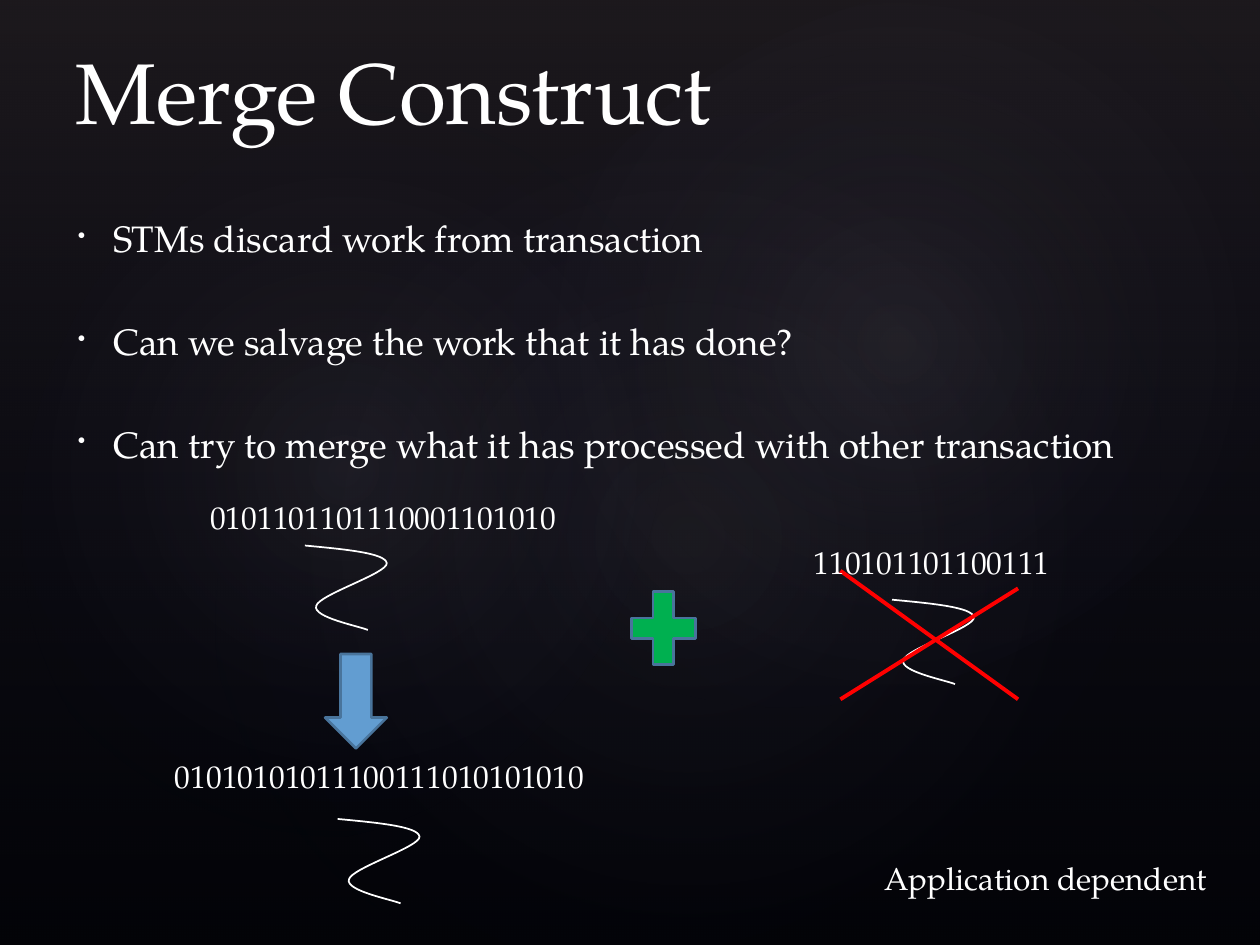
from dataclasses import dataclass
from typing import NamedTuple

from lxml.etree import SubElement
from pptx import Presentation
from pptx.dml.color import RGBColor
from pptx.enum.shapes import MSO_CONNECTOR, MSO_SHAPE
from pptx.enum.text import MSO_ANCHOR
from pptx.oxml import parse_xml
from pptx.oxml.ns import nsdecls, qn
from pptx.util import Inches, Pt


@dataclass(frozen=True)
class Theme:
    font: str = "TeX Gyre Pagella"
    background: str = "000000"
    text: str = "FFFFFF"
    glow: str = "C4BCC6"
    glow_edge: str = "242852"
    veil: str = "504652"
    cross: str = "FF0000"
    plus: str = "00B050"
    arrow: str = "629DD1"
    outline: str = "49749B"
    title_size: int = 49
    body_size: int = 21
    label_size: int = 18


class Box(NamedTuple):
    left: float
    top: float
    width: float
    height: float


class Glow(NamedTuple):
    box: Box
    rotation: float
    opacity: int


class Label(NamedTuple):
    text: str
    box: Box


class Stop(NamedTuple):
    position: int
    color: str
    opacity: int


THEME = Theme()
LINEAR = '<a:lin ang="5400000" scaled="0"/>'
RADIAL = ('<a:path path="circle"><a:fillToRect l="50000" t="50000" '
          'r="50000" b="50000"/></a:path>')
GLOWS = [
    Glow(Box(1.5, 1.14, 7.92, 6.24), 328.7, 7),
    Glow(Box(-0.3, 1.28, 6.06, 4.9), 294.3, 8),
    Glow(Box(3.58, 0.13, 7.09, 5.2), 328.7, 8),
]
BULLETS = [
    "STMs discard work from transaction",
    "Can we salvage the work that it has done?",
    "Can try to merge what it has processed with other transaction",
]
LABELS = [
    Label("0101101101110001101010", Box(1.57, 3.9, 2.98, 0.4)),
    Label("110101101100111", Box(6.36, 4.26, 2.1, 0.4)),
    Label("01010101011100111010101010", Box(1.29, 5.96, 3.48, 0.4)),
    Label("Application dependent", Box(6.92, 6.77, 2.86, 0.4)),
]
THREAD_STARTS = [(2.42, 4.33), (7.08, 4.76), (2.68, 6.5)]
THREAD_CURVE = [
    (0.32, 0.03), (0.64, 0.06), (0.65, 0.14),
    (0.66, 0.22), (0.11, 0.39), (0.09, 0.48),
    (0.06, 0.57), (0.43, 0.64), (0.5, 0.67),
]
CROSS_LINES = [(8.08, 4.67, 6.67, 5.55), (6.67, 4.53, 8.08, 5.55)]


def rgb(color: str) -> RGBColor:
    return RGBColor.from_string(color)


def add_preset(slide, preset, box: Box):
    shape = slide.shapes.add_shape(preset, *map(Inches, box))
    shape.shadow.inherit = False
    return shape


def add_gradient(slide, preset, box: Box, stops: list[Stop], direction: str):
    shape = add_preset(slide, preset, box)
    shape.line.fill.background()
    shape.fill.gradient()
    stop_xml = "".join(
        f'<a:gs pos="{stop.position * 1000}"><a:srgbClr val="{stop.color}">'
        f'<a:alpha val="{stop.opacity * 1000}"/></a:srgbClr></a:gs>'
        for stop in stops
    )
    gradient = parse_xml(
        f'<a:gradFill {nsdecls("a")} rotWithShape="1">'
        f"<a:gsLst>{stop_xml}</a:gsLst>{direction}</a:gradFill>"
    )
    properties = shape._element.spPr
    properties.replace(properties.find(qn("a:gradFill")), gradient)
    return shape


def add_backdrop(slide) -> None:
    slide.background.fill.solid()
    slide.background.fill.fore_color.rgb = rgb(THEME.background)
    add_gradient(slide, MSO_SHAPE.RECTANGLE, Box(0, 0, 10, 7.5),
                 [Stop(0, THEME.veil, 36), Stop(100, THEME.glow_edge, 10)], LINEAR)
    for glow in GLOWS:
        stops = [Stop(0, THEME.glow, glow.opacity), Stop(58, THEME.glow_edge, 0)]
        shape = add_gradient(slide, MSO_SHAPE.OVAL, glow.box, stops, RADIAL)
        shape.rotation = glow.rotation


def add_text(slide, lines: list[str], box: Box, size: int,
             anchor=MSO_ANCHOR.TOP, wrap: bool = True):
    frame = slide.shapes.add_textbox(*map(Inches, box)).text_frame
    frame.word_wrap = wrap
    frame.vertical_anchor = anchor
    frame.text = "\n".join(lines)
    for paragraph in frame.paragraphs:
        paragraph.font.name = THEME.font
        paragraph.font.size = Pt(size)
        paragraph.font.color.rgb = rgb(THEME.text)
    return frame


def add_bullets(slide) -> None:
    frame = add_text(slide, BULLETS, Box(0.5, 1.33, 8.58, 2.75),
                     THEME.body_size, MSO_ANCHOR.MIDDLE)
    for index, paragraph in enumerate(frame.paragraphs):
        paragraph.space_before = Pt(33.4 if index else 4.2)
        properties = paragraph._p.get_or_add_pPr()
        properties.set("marL", str(Inches(0.3)))
        properties.set("indent", str(Inches(-0.28)))
        bullet_size = parse_xml(f'<a:buSzPct {nsdecls("a")} val="60000"/>')
        bullet = parse_xml(f'<a:buChar {nsdecls("a")} char="•"/>')
        properties.find(qn("a:spcBef")).addnext(bullet_size)
        bullet_size.addnext(bullet)


def add_thread(slide, left: float, top: float) -> None:
    builder = slide.shapes.build_freeform(Inches(left), Inches(top))
    builder.add_line_segments(
        [(Inches(left + x), Inches(top + y)) for x, y in THREAD_CURVE], close=False)
    shape = builder.convert_to_shape()
    shape.shadow.inherit = False
    shape.fill.background()
    shape.line.color.rgb = rgb(THEME.text)
    shape.line.width = Pt(1)
    outline = shape._element.spPr.find(".//" + qn("a:path"))
    segments = outline.findall(qn("a:lnTo"))
    for start in range(0, len(segments), 3):
        curve = SubElement(outline, qn("a:cubicBezTo"))
        for segment in segments[start:start + 3]:
            curve.append(segment[0])
            outline.remove(segment)


def add_cross_line(slide, ends: tuple[float, float, float, float]) -> None:
    connector = slide.shapes.add_connector(MSO_CONNECTOR.STRAIGHT, *map(Inches, ends))
    connector.line.color.rgb = rgb(THEME.cross)
    connector.line.width = Pt(2.25)
    SubElement(connector._element.spPr, qn("a:effectLst"))


def add_symbol(slide, preset, box: Box, color: str) -> None:
    shape = add_preset(slide, preset, box)
    shape.fill.solid()
    shape.fill.fore_color.rgb = rgb(color)
    shape.line.color.rgb = rgb(THEME.outline)
    shape.line.width = Pt(1.5)


def main() -> None:
    presentation = Presentation()
    presentation.slide_width = Inches(10)
    presentation.slide_height = Inches(7.5)
    slide = presentation.slides.add_slide(presentation.slide_layouts[6])
    add_backdrop(slide)
    add_text(slide, ["Merge Construct"], Box(0.5, 0.17, 8.25, 1),
             THEME.title_size, MSO_ANCHOR.BOTTOM)
    add_bullets(slide)
    for left, top in THREAD_STARTS:
        add_thread(slide, left, top)
    for ends in CROSS_LINES:
        add_cross_line(slide, ends)
    for label in LABELS:
        add_text(slide, [label.text], label.box, THEME.label_size, wrap=False)
    add_symbol(slide, MSO_SHAPE.MATH_PLUS, Box(4.92, 4.59, 0.69, 0.79), THEME.plus)
    add_symbol(slide, MSO_SHAPE.DOWN_ARROW, Box(2.58, 5.19, 0.49, 0.75), THEME.arrow)
    presentation.save("out.pptx")


if __name__ == "__main__":
    main()
